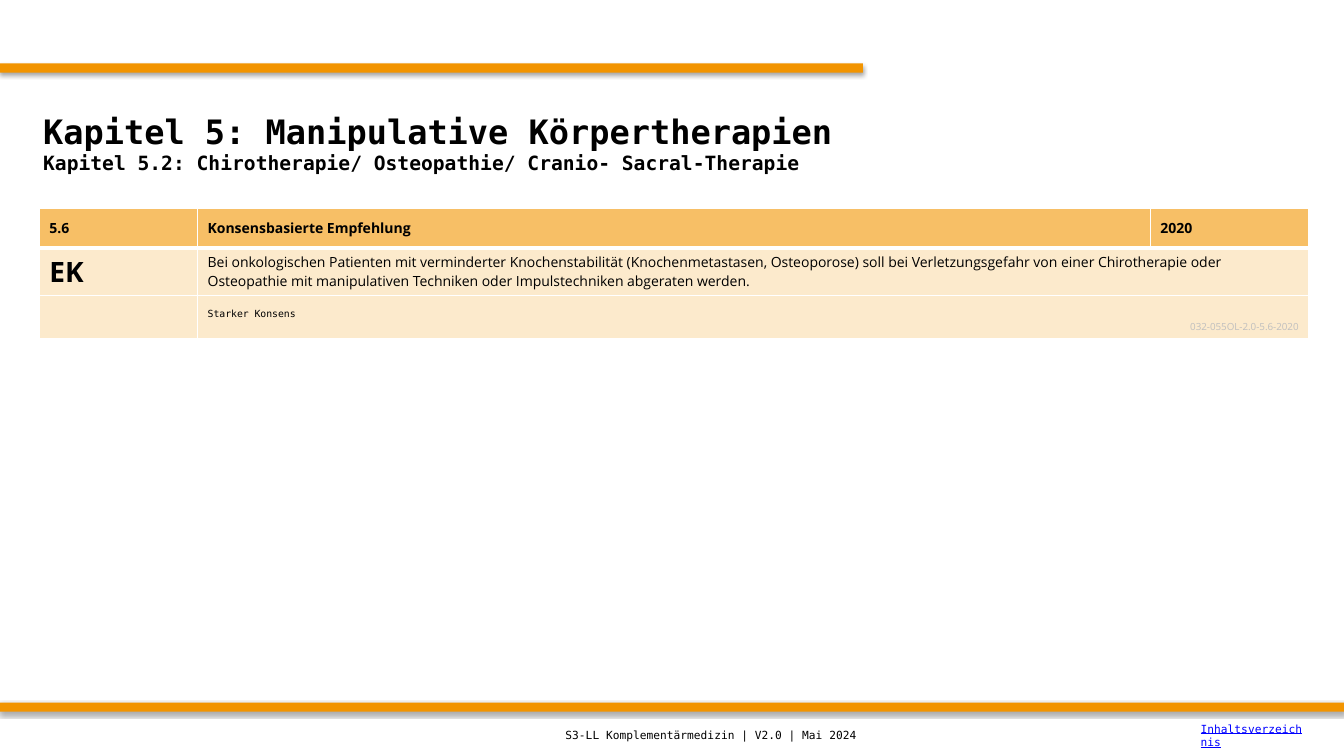
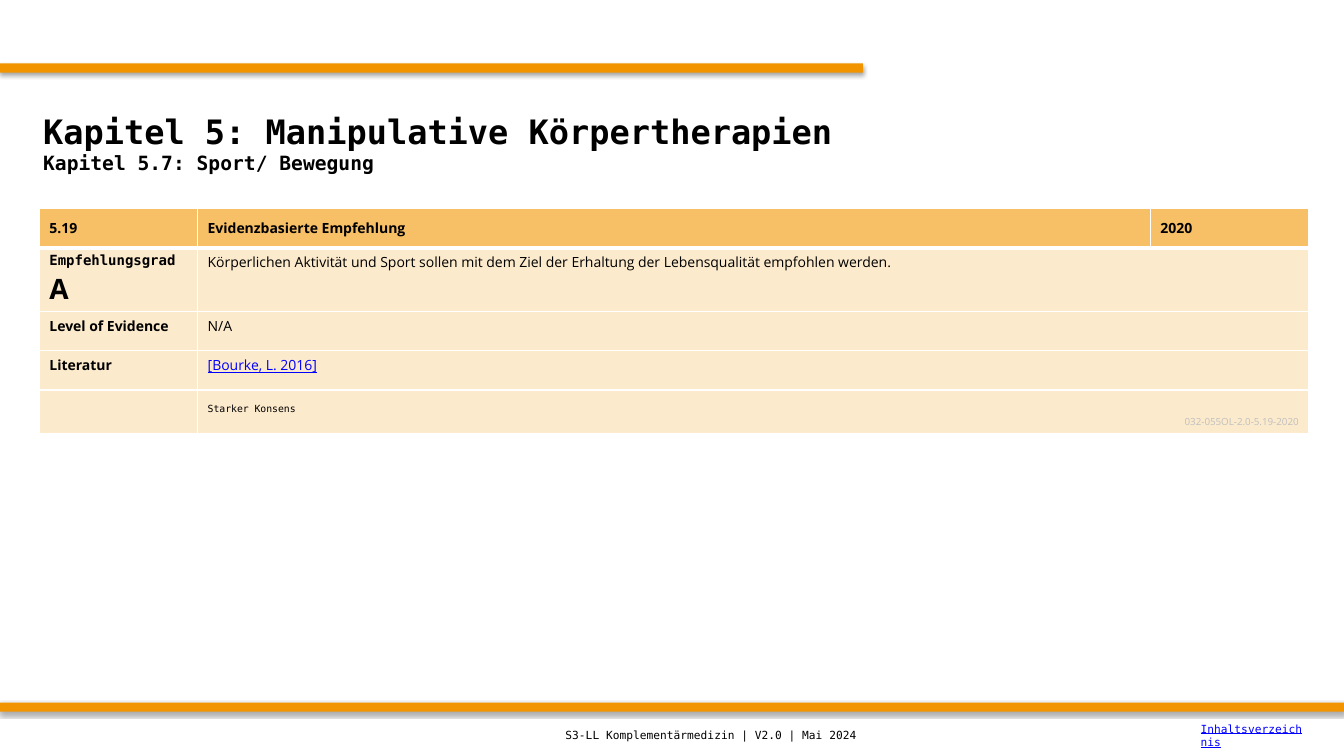
from lxml import etree
from pptx import Presentation
from pptx.dml.color import RGBColor
from pptx.enum.shapes import MSO_SHAPE
from pptx.enum.text import MSO_ANCHOR, PP_ALIGN
from pptx.oxml import parse_xml
from pptx.oxml.ns import qn
from pptx.util import Inches, Pt

RECT = MSO_SHAPE.RECTANGLE
TOP, MIDDLE, BOTTOM = MSO_ANCHOR.TOP, MSO_ANCHOR.MIDDLE, MSO_ANCHOR.BOTTOM
RIGHT = PP_ALIGN.RIGHT
MONO, SANS = "DejaVu Sans Mono", "Open Sans"
NS = "http://schemas.openxmlformats.org/drawingml/2006/main"
COLORS = {
    "band": "F29400", "head": "F7BF66", "body": "FCEACC", "edge": "FFFFFF",
    "text": "000000", "link": "0000FF", "code": "BFBFBF",
}

# Shared layout
BANDS = [(0.63, 8.56), (6.97, 13.33)]  # top, width
COLS = [1.57, 9.45, 1.57]
FOOTS = [  # left, width, text, format
    (5.51, 5.51, "S3-LL Komplementärmedizin | V2.0 | Mai 2024", {}),
    (11.81, 1.22, "Inhaltsverzeichnis", {"color": "link", "under": True}),
]
BIG = {"size": 20, "bold": True}
BOLD = {"bold": True}

# Per slide: subtitle, header cells, body rows as (height, label lines, text, format)
PAGES = [
    {
        "sub": "Kapitel 5.2: Chirotherapie/ Osteopathie/ Cranio- Sacral-Therapie",
        "head": ["5.6", "Konsensbasierte Empfehlung", "2020"],
        "rows": [
            (0.47, [("EK", BIG)],
             "Bei onkologischen Patienten mit verminderter Knochenstabilität "
             "(Knochenmetastasen, Osteoporose) soll bei Verletzungsgefahr von einer "
             "Chirotherapie oder Osteopathie mit manipulativen Techniken oder "
             "Impulstechniken abgeraten werden.", {}),
        ],
    },
    {
        "sub": "Kapitel 5.7: Sport/ Bewegung",
        "head": ["5.19", "Evidenzbasierte Empfehlung", "2020"],
        "rows": [
            (0.63, [("Empfehlungsgrad", {"bold": True, "face": MONO}), ("A", BIG)],
             "Körperlichen Aktivität und Sport sollen mit dem Ziel der Erhaltung der "
             "Lebensqualität empfohlen werden.", {}),
            (0.39, [("Level of Evidence", BOLD)], "N/A", {}),
            (0.39, [("Literatur", BOLD)], "[Bourke, L. 2016]",
             {"color": "link", "under": True}),
        ],
    },
]


def put(frame, text, size=10, face=SANS, color="text", bold=False,
        under=False, align=None, anchor=TOP):
    """Write one paragraph, reusing the first one while the frame is empty."""
    par = frame.add_paragraph() if frame.text else frame.paragraphs[0]
    frame.word_wrap = True
    frame.vertical_anchor = anchor
    par.alignment = align
    run = par.add_run()
    run.text = text
    font = run.font
    font.size, font.name, font.bold, font.underline = Pt(size), face, bold, under
    font.color.rgb = RGBColor.from_string(COLORS[color])


def paint(cell, color, base):
    """Fill a cell and draw its borders, the bottom one with its own width."""
    props = cell._tc.get_or_add_tcPr()
    for side, width in (("L", 1), ("R", 1), ("T", 1), ("B", base)):
        props.append(parse_xml(
            f'<a:ln{side} xmlns:a="{NS}" w="{Pt(width)}"><a:solidFill>'
            f'<a:srgbClr val="{COLORS["edge"]}"/></a:solidFill></a:ln{side}>'))
    cell.fill.solid()
    cell.fill.fore_color.rgb = RGBColor.from_string(COLORS[color])


deck = Presentation()
deck.slide_width, deck.slide_height = Inches(13.33), Inches(7.5)

for page in PAGES:
    slide = deck.slides.add_slide(deck.slide_layouts[6])
    shapes = slide.shapes

    # Bands with a soft shadow
    for top, width in BANDS:
        band = shapes.add_shape(RECT, 0, Inches(top), Inches(width), Inches(0.09))
        band.fill.solid()
        band.fill.fore_color.rgb = RGBColor.from_string(COLORS["band"])
        band.line.fill.background()
        band.shadow.inherit = False
        glow = etree.SubElement(
            band._element.spPr.find(qn("a:effectLst")), qn("a:outerShdw"),
            blurRad=str(Pt(3.1)), dist=str(Pt(1.8)), dir="5400000", rotWithShape="0")
        tint = etree.SubElement(glow, qn("a:srgbClr"), val=COLORS["text"])
        etree.SubElement(tint, qn("a:alpha"), val="35000")

    # Title
    title = shapes.add_textbox(Inches(0.33), Inches(0.83), Inches(12.67), Inches(1.17))
    for text, size in (("Kapitel 5: Manipulative Körpertherapien", 24), (page["sub"], 14)):
        put(title.text_frame, text, size=size, face=MONO, bold=True, anchor=MIDDLE)

    # Table grid
    rows = page["rows"]
    highs = [0.39] + [row[0] for row in rows] + [0.43]
    grid = shapes.add_table(len(highs), len(COLS), Inches(0.39), Inches(2.07),
                            Inches(sum(COLS)), Inches(sum(highs))).table
    grid.horz_banding = False
    for col, width in zip(grid.columns, COLS):
        col.width = Inches(width)
    for index, high in enumerate(highs):
        grid.rows[index].height = Inches(high)
        for cell in grid.rows[index].cells:
            paint(cell, "body" if index else "head", 1 if index else 3)
        if index:
            grid.cell(index, 1).merge(grid.cell(index, 2))

    # Header row
    for index, text in enumerate(page["head"]):
        cell = grid.cell(0, index)
        put(cell.text_frame, text, bold=True)
        cell.vertical_anchor = MIDDLE

    # Body rows
    for index, (high, label, text, style) in enumerate(rows, 1):
        for line, form in label:
            put(grid.cell(index, 0).text_frame, line, **form)
        put(grid.cell(index, 1).text_frame, text, **style)

    # Consensus row
    number, _, year = page["head"]
    cell = grid.cell(len(highs) - 1, 1)
    put(cell.text_frame, "Starker Konsens", size=7, face=MONO)
    put(cell.text_frame, f"032-055OL-2.0-{number}-{year}", size=7, color="code", align=RIGHT)
    cell.vertical_anchor = BOTTOM

    # Footer
    for left, width, text, style in FOOTS:
        foot = shapes.add_textbox(Inches(left), Inches(7.1), Inches(width), Inches(0.39))
        put(foot.text_frame, text, size=8, face=MONO, anchor=MIDDLE, **style)

deck.save("out.pptx")
